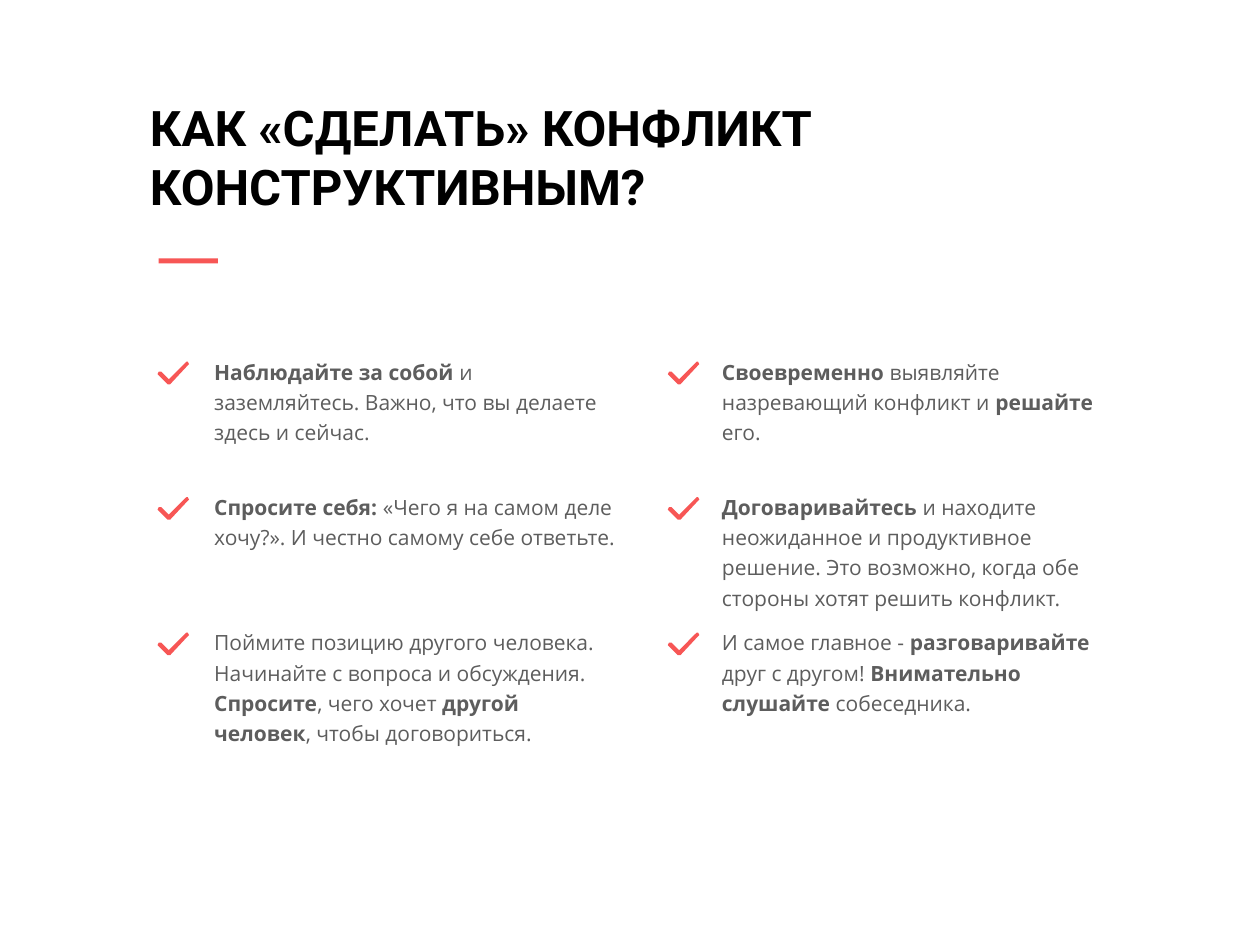
from copy import deepcopy
from dataclasses import dataclass

from pptx import Presentation
from pptx.dml.color import RGBColor
from pptx.enum.shapes import MSO_SHAPE
from pptx.enum.text import MSO_ANCHOR, MSO_AUTO_SIZE, PP_ALIGN
from pptx.util import Inches, Pt


@dataclass(frozen=True)
class Theme:
    accent: RGBColor = RGBColor(0xF7, 0x56, 0x55)
    title_color: RGBColor = RGBColor(0, 0, 0)
    body_color: RGBColor = RGBColor(0x5D, 0x5D, 0x5D)
    title_font: str = "Roboto"
    body_font: str = "Open Sans"
    title_size: Pt = Pt(28)
    body_size: Pt = Pt(12)


THEME = Theme()

TITLE = "КАК «СДЕЛАТЬ» КОНФЛИКТ \vКОНСТРУКТИВНЫМ?"

# One list per column; asterisks enclose the bold words.
ADVICE_COLUMNS = [
    [
        "*Наблюдайте за собой *и заземляйтесь. Важно, что вы делаете здесь и сейчас.",
        "*Спросите себя: *«Чего я на самом деле хочу?». И честно самому себе ответьте.",
        "Поймите позицию другого человека. Начинайте с вопроса и обсуждения. "
        "*Спросите*, чего хочет *другой человек*, чтобы договориться.",
    ],
    [
        "*Своевременно* выявляйте назревающий конфликт и *решайте *его.",
        "*Договаривайтесь* и находите неожиданное и продуктивное решение. "
        "Это возможно, когда обе стороны хотят решить конфликт.",
        "И самое главное - *разговаривайте* друг с другом! "
        "*Внимательно слушайте *собеседника.",
    ],
]

TEXT_LEFTS = [1.62, 5.65]
CHECK_LEFTS = [1.25, 5.3]
FIRST_ROW_TOP = 2.76
ROW_PITCH = 1.075
CHECK_DROP = 0.11

# Check mark outline in hundredths of an inch.
CHECK_OUTLINE = [
    (9, 18), (8, 17.5), (1, 11), (0, 9.5), (1, 8), (2, 7.7), (3, 8.5),
    (9, 14), (22, 1), (23, 0), (24, 0.3), (25, 1.5), (24, 3), (10, 17.5),
]


def repeat_body_placeholder(layout, count):
    """Give the layout the wanted number of body placeholders."""
    body = layout.placeholders[1].element
    for number in range(1, count):
        duplicate = deepcopy(body)
        duplicate.xpath(".//p:cNvPr")[0].set("id", str(100 + number))
        duplicate.xpath(".//p:ph")[0].set("idx", str(100 + number))
        body.getparent().append(duplicate)


def place(shape, left, top, width, height):
    shape.left, shape.top = Inches(left), Inches(top)
    shape.width, shape.height = Inches(width), Inches(height)


def format_run(run, font_name, size, color, bold):
    run.font.name = font_name
    run.font.size = size
    run.font.color.rgb = color
    run.font.bold = bold


def fill_accent(shape):
    shape.shadow.inherit = False
    shape.fill.solid()
    shape.fill.fore_color.rgb = THEME.accent
    shape.line.fill.background()


def set_title(title):
    place(title, 1.09, 1.25, 6.34, 0.51)
    frame = title.text_frame
    frame.text = TITLE
    frame.word_wrap = False
    frame.auto_size = MSO_AUTO_SIZE.NONE
    frame.vertical_anchor = MSO_ANCHOR.BOTTOM
    paragraph = frame.paragraphs[0]
    paragraph.alignment = PP_ALIGN.LEFT
    for run in paragraph.runs:
        format_run(run, THEME.title_font, THEME.title_size, THEME.title_color, True)


def set_advice(placeholder, text, left, top):
    place(placeholder, left, top, 3.39, 0.5)
    frame = placeholder.text_frame
    frame.word_wrap = True
    frame.auto_size = MSO_AUTO_SIZE.NONE
    frame.vertical_anchor = MSO_ANCHOR.TOP
    frame.margin_left = Inches(0.08)
    paragraph = frame.paragraphs[0]
    paragraph.alignment = PP_ALIGN.LEFT
    paragraph.line_spacing = 1.2
    paragraph.space_before = Pt(10)
    for index, segment in enumerate(text.split("*")):
        if segment:
            run = paragraph.add_run()
            run.text = segment
            format_run(run, THEME.body_font, THEME.body_size, THEME.body_color,
                       index % 2 == 1)


def add_check_mark(slide, left, top):
    start, *others = CHECK_OUTLINE
    builder = slide.shapes.build_freeform(*start, scale=Inches(0.01))
    builder.add_line_segments(others, close=True)
    fill_accent(builder.convert_to_shape(Inches(left), Inches(top)))


def add_title_rule(slide):
    rule = slide.shapes.add_shape(
        MSO_SHAPE.RECTANGLE, Inches(1.26), Inches(2.05), Inches(0.47), Inches(0.04))
    fill_accent(rule)


def main():
    presentation = Presentation()
    presentation.slide_width, presentation.slide_height = Inches(10), Inches(7.5)
    layout = presentation.slide_layouts.get_by_name("Section Header")
    repeat_body_placeholder(layout, sum(map(len, ADVICE_COLUMNS)))
    slide = presentation.slides.add_slide(layout)

    set_title(slide.shapes.title)
    add_title_rule(slide)
    bodies = iter(list(slide.placeholders)[1:])
    for texts, text_left, check_left in zip(ADVICE_COLUMNS, TEXT_LEFTS, CHECK_LEFTS):
        for row, text in enumerate(texts):
            top = FIRST_ROW_TOP + row * ROW_PITCH
            set_advice(next(bodies), text, text_left, top)
            add_check_mark(slide, check_left, top + CHECK_DROP)

    presentation.save("out.pptx")


if __name__ == "__main__":
    main()
